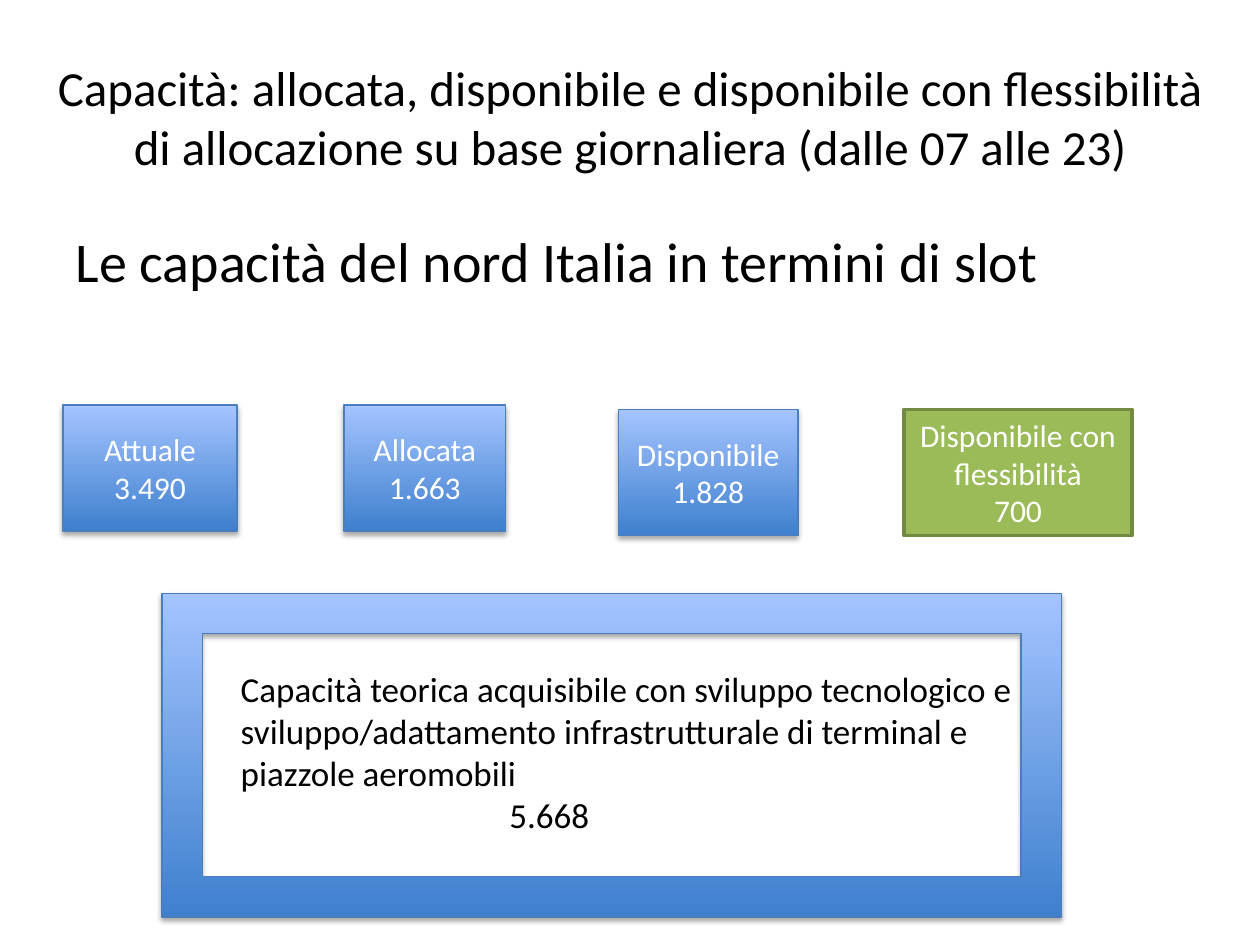
import pptx
import pptx.util
import pptx.dml.color
import pptx.enum.shapes
import pptx.enum.text
import pptx.oxml.ns
import lxml.etree

Pt = pptx.util.Pt
ALIGN = pptx.enum.text.PP_ALIGN
ANCHOR = pptx.enum.text.MSO_ANCHOR
AUTO_SIZE = pptx.enum.text.MSO_AUTO_SIZE
SHAPE = pptx.enum.shapes.MSO_SHAPE
qn = pptx.oxml.ns.qn


def color(value):
    return pptx.dml.color.RGBColor.from_string(value)


def put_box(part, box):
    part.left, part.top, part.width, part.height = [Pt(v) for v in box]


def write(frame, lines, size, ink, align):
    for index, line in enumerate(lines):
        paragraph = frame.paragraphs[0] if index == 0 else frame.add_paragraph()
        paragraph.alignment = align
        run = paragraph.add_run()
        run.text = line
        run.font.name = "Calibri"
        run.font.size = Pt(size)
        run.font.color.rgb = color(ink)


def add_shadow(panel):
    effects = panel._element.spPr.find(qn("a:effectLst"))
    shadow = lxml.etree.SubElement(
        effects, qn("a:outerShdw"), blurRad=str(Pt(3.1)), dist=str(Pt(1.8)),
        dir="5400000", rotWithShape="0")
    black = lxml.etree.SubElement(shadow, qn("a:srgbClr"), val="000000")
    lxml.etree.SubElement(black, qn("a:alpha"), val="35000")


def add_panel(slide, kind, box, green=False):
    panel = slide.shapes.add_shape(kind, *[Pt(v) for v in box])
    panel.shadow.inherit = False
    if green:
        panel.fill.solid()
        panel.fill.fore_color.rgb = color("9BBB59")
    else:
        panel.fill.gradient()
        panel.fill.gradient_angle = 90
        for stop, shade in zip(panel.fill.gradient_stops, ("3F80CE", "A4C4FF")):
            stop.color.rgb = color(shade)
        add_shadow(panel)
    panel.line.color.rgb = color("738A42" if green else "4B7EBC")
    panel.line.width = Pt(2 if green else 0.75)
    return panel


def add_title(slide, box):
    title = slide.shapes.title
    put_box(title, box)
    frame = title.text_frame
    frame.auto_size = AUTO_SIZE.NONE
    frame.vertical_anchor = ANCHOR.MIDDLE
    write(frame, ["Capacità: allocata, disponibile e disponibile con flessibilità "
                  "di allocazione su base giornaliera (dalle 07 alle 23)"],
          28, "000000", ALIGN.CENTER)


def add_subject(slide, box):
    subject = slide.placeholders[1]
    put_box(subject, box)
    frame = subject.text_frame
    frame.auto_size = AUTO_SIZE.NONE
    write(frame, ["Le capacità del nord Italia in termini di slot"],
          32, "000000", ALIGN.LEFT)
    properties = frame.paragraphs[0]._p.get_or_add_pPr()
    properties.set("marL", "0")
    properties.set("indent", "0")
    lxml.etree.SubElement(properties, qn("a:buNone"))


def add_capacities(slide, box):
    left, top, height = box
    capacities = [
        (0, 0, 99.5, "Attuale", "3.490"),
        (160.5, 0, 92.5, "Allocata", "1.663"),
        (317.5, 2.5, 102.5, "Disponibile", "1.828"),
        (480.5, 2.5, 130.5, "Disponibile con flessibilità", "700"),
    ]
    for offset, drop, width, label, slots in capacities:
        panel = add_panel(slide, SHAPE.RECTANGLE,
                          (left + offset, top + drop, width, height),
                          green=slots == "700")
        panel.text_frame.word_wrap = True
        panel.text_frame.vertical_anchor = ANCHOR.MIDDLE
        write(panel.text_frame, [label, slots], 18, "FFFFFF", ALIGN.CENTER)


def add_theoretical_capacity(slide, box):
    left, top, width, height = box
    add_panel(slide, SHAPE.FRAME, box)
    note = slide.shapes.add_textbox(
        Pt(left + 38), Pt(top + 39), Pt(width - 54), Pt(height - 80.5))
    frame = note.text_frame
    frame.word_wrap = False
    frame.auto_size = AUTO_SIZE.SHAPE_TO_FIT_TEXT
    write(frame, ["Capacità teorica acquisibile con sviluppo tecnologico e",
                  "sviluppo/adattamento infrastrutturale di terminal e",
                  "piazzole aeromobili",
                  "5.668"], 20, "000000", ALIGN.LEFT)
    frame.paragraphs[-1]._p.get_or_add_pPr().set("marL", str(Pt(153.5)))


def main():
    deck = pptx.Presentation()
    deck.slide_width, deck.slide_height = Pt(720), Pt(540)
    slide = deck.slides.add_slide(deck.slide_layouts[1])
    add_title(slide, (15, 21.5, 690, 90))
    add_subject(slide, (36, 126, 648, 356.5))
    add_capacities(slide, (36, 231.5, 72))
    add_theoretical_capacity(slide, (92.5, 339, 514, 185))
    deck.save("out.pptx")


if __name__ == "__main__":
    main()
